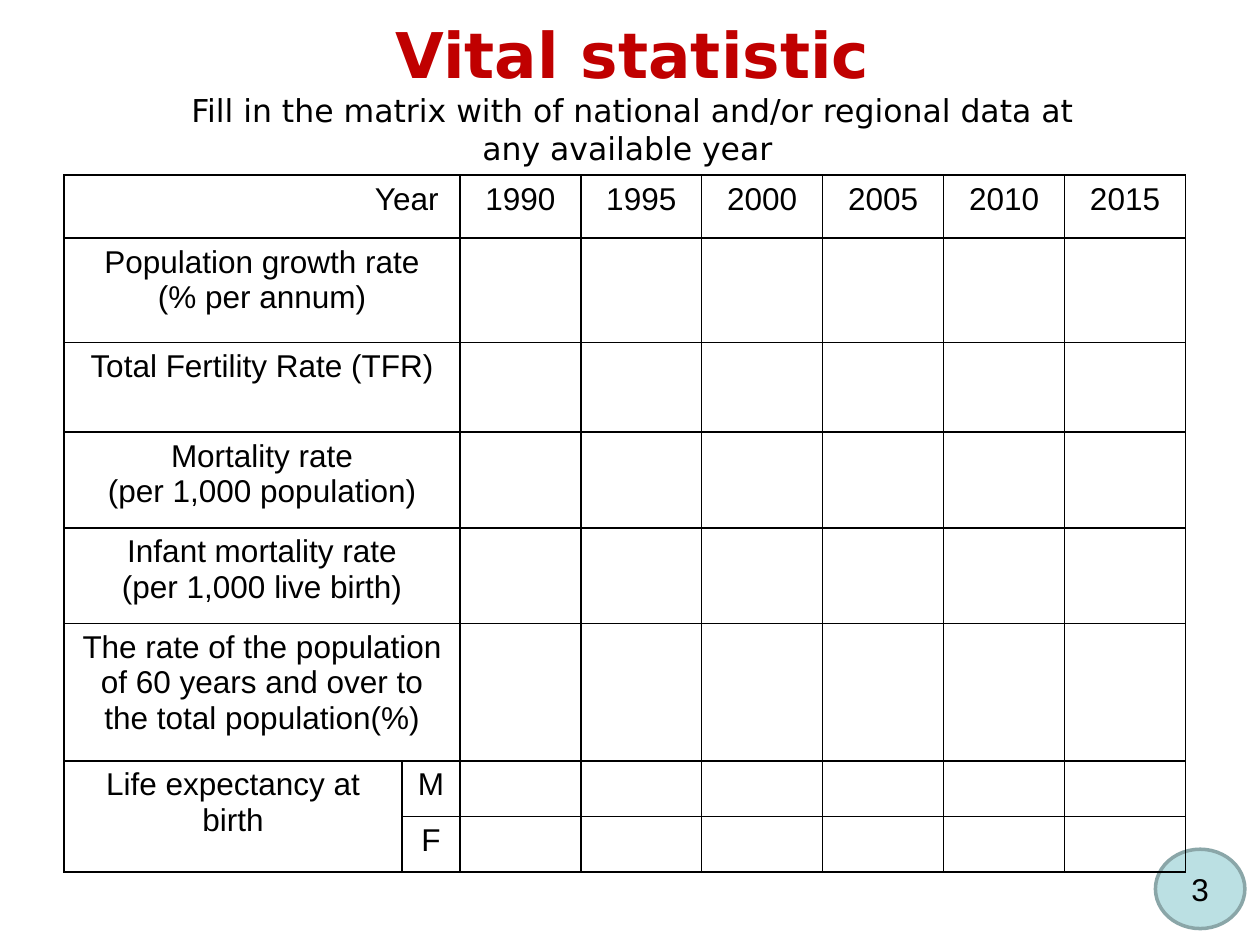
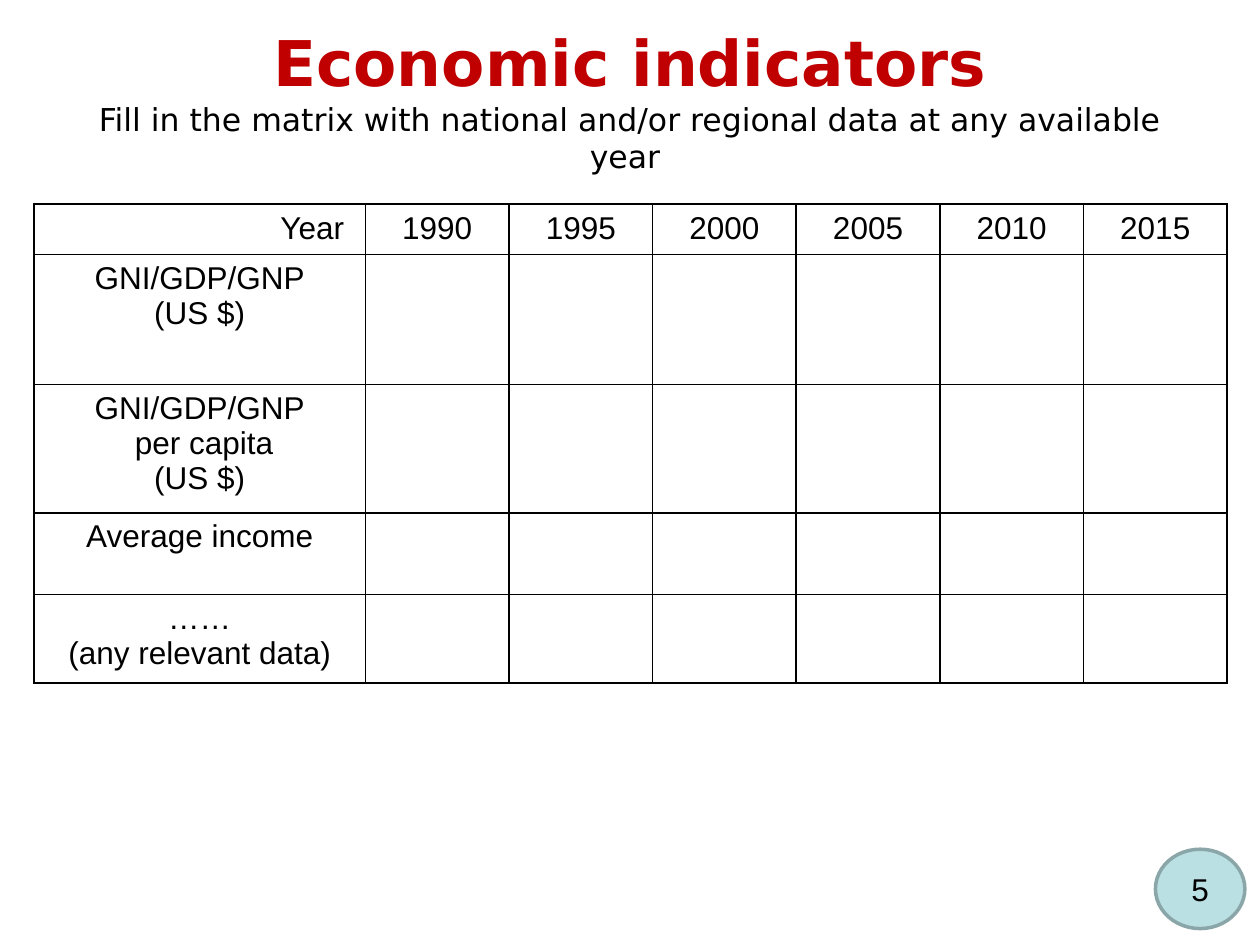
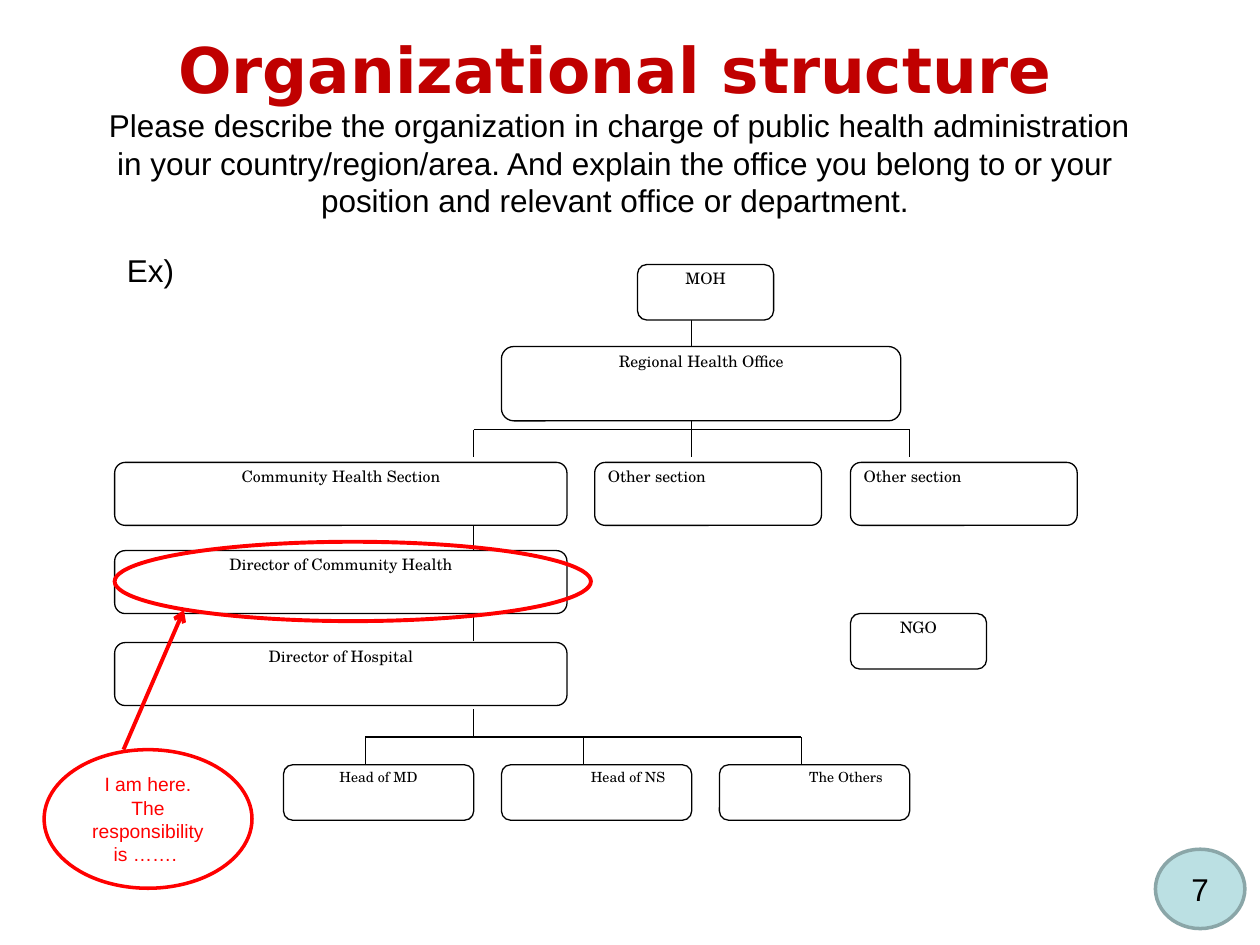
from typing import NamedTuple, Optional

from lxml import etree
from pptx import Presentation
from pptx.dml.color import RGBColor
from pptx.enum.shapes import MSO_CONNECTOR as Connector, MSO_SHAPE as Preset
from pptx.enum.text import MSO_ANCHOR as Anchor, PP_ALIGN as Align
from pptx.oxml.ns import qn
from pptx.util import Inches, Pt

COLORS = {
    "title": "C00000",
    "text": "000000",
    "line": "000000",
    "box": "FFFFFF",
    "badge": "BBE0E3",
    "badge_line": "8AA6A8",
    "callout": "FF0000",
}
SANS, TITLE_FONT, CHART_FONT = "Arial", "DejaVu Sans", "TeX Gyre Schola"
YEARS = ["1990", "1995", "2000", "2005", "2010", "2015"]


class Area(NamedTuple):
    left: float
    top: float
    width: float
    height: float

    def lengths(self) -> list:
        return [Inches(value) for value in self]


class Heading(NamedTuple):
    area: Area
    title: str
    subtitle: str
    subtitle_font: str = TITLE_FONT


class Matrix(NamedTuple):
    area: Area
    label_widths: list
    year_width: float
    row_heights: list
    labels: list


class OrgBox(NamedTuple):
    text: str
    area: Area
    align: Align = Align.CENTER
    size: float = 9
    indent: float = 0


def rgb(name: str) -> RGBColor:
    return RGBColor.from_string(COLORS[name])


# Text and shape helpers
def add_run(paragraph, text: str, size: float, font: str = SANS,
            color: str = "text", bold: bool = False) -> None:
    run = paragraph.add_run()
    run.text = text
    run.font.size = Pt(size)
    run.font.name = font
    run.font.bold = bold
    run.font.color.rgb = rgb(color)


def write_lines(frame, text: str, size: float, font: str = SANS,
                color: str = "text", align: Align = Align.CENTER) -> None:
    frame.word_wrap = True
    for index, line in enumerate(text.split("\n")):
        paragraph = frame.add_paragraph() if index else frame.paragraphs[0]
        paragraph.alignment = align
        add_run(paragraph, line, size, font, color)


def add_outlined(slide, preset: Preset, area: Area, line: str, width: float,
                 fill: Optional[str] = None):
    shape = slide.shapes.add_shape(preset, *area.lengths())
    shape.shadow.inherit = False
    if fill:
        shape.fill.solid()
        shape.fill.fore_color.rgb = rgb(fill)
    else:
        shape.fill.background()
    shape.line.color.rgb = rgb(line)
    shape.line.width = Pt(width)
    return shape


def add_line(slide, start: tuple, end: tuple, color: str = "line",
             width: float = 0.75, arrow: bool = False) -> None:
    points = [Inches(value) for value in (*start, *end)]
    connector = slide.shapes.add_connector(Connector.STRAIGHT, *points)
    connector.line.color.rgb = rgb(color)
    connector.line.width = Pt(width)
    properties = connector._element.spPr
    if arrow:
        line = properties.find(qn("a:ln"))
        etree.SubElement(line, qn("a:tailEnd"), type="arrow")
    etree.SubElement(properties, qn("a:effectLst"))


# Shared heading and page badge
def add_page(presentation, heading: Heading, number: str):
    slide = presentation.slides.add_slide(presentation.slide_layouts[6])
    frame = slide.shapes.add_textbox(*heading.area.lengths()).text_frame
    frame.word_wrap = True
    frame.vertical_anchor = Anchor.MIDDLE
    paragraph = frame.paragraphs[0]
    paragraph.alignment = Align.CENTER
    add_run(paragraph, heading.title, 36, TITLE_FONT, "title", bold=True)
    paragraph.add_line_break()
    add_run(paragraph, heading.subtitle, 18, heading.subtitle_font)

    badge = add_outlined(slide, Preset.OVAL, Area(9.17, 6.74, 0.71, 0.63),
                         "badge_line", 2, "badge")
    badge.text_frame.vertical_anchor = Anchor.MIDDLE
    write_lines(badge.text_frame, number, 18)
    return slide


# Matrix of indicators by year
def style_cell(cell) -> None:
    properties = cell._tc.get_or_add_tcPr()
    for side in ("a:lnL", "a:lnR", "a:lnT", "a:lnB"):
        border = etree.SubElement(properties, qn(side), w=str(Pt(1)))
        solid = etree.SubElement(border, qn("a:solidFill"))
        etree.SubElement(solid, qn("a:srgbClr"), val=COLORS["line"])
    cell.fill.background()


def add_matrix(slide, matrix: Matrix):
    label_count = len(matrix.label_widths)
    widths = matrix.label_widths + [matrix.year_width] * len(YEARS)
    table = slide.shapes.add_table(len(matrix.row_heights), len(widths),
                                   *matrix.area.lengths()).table
    table.first_row = table.horz_banding = False
    for column, width in zip(table.columns, widths):
        column.width = Inches(width)
    for row, height in zip(table.rows, matrix.row_heights):
        row.height = Inches(height)
    for cell in table.iter_cells():
        style_cell(cell)

    write_lines(table.cell(0, 0).text_frame, "Year ", 18, align=Align.RIGHT)
    for index, year in enumerate(YEARS, label_count):
        write_lines(table.cell(0, index).text_frame, year, 18)
    for index, label in enumerate(matrix.labels, 1):
        write_lines(table.cell(index, 0).text_frame, label, 18)
    return table


def build_vital_statistic(presentation) -> None:
    slide = add_page(presentation, Heading(
        Area(1.38, 0.21, 7.28, 1.02), "Vital statistic",
        "Fill in the matrix with of national and/or regional data at any available year "), "3")
    table = add_matrix(slide, Matrix(
        Area(0.51, 1.39, 8.9, 5.51), [2.68, 0.46], 0.96,
        [0.5, 0.83, 0.71, 0.76, 0.76, 1.09, 0.44, 0.44],
        ["Population growth rate\n(% per annum)",
         "Total Fertility Rate (TFR)",
         "Mortality rate\n(per 1,000 population)",
         "Infant mortality rate\n(per 1,000 live birth)",
         "The rate of the population of 60 years and over to the total population(%)",
         "Life expectancy at birth"]))
    for row in range(6):
        table.cell(row, 0).merge(table.cell(row, 1))
    table.cell(6, 0).merge(table.cell(7, 0))
    for row, sex in enumerate("MF", 6):
        write_lines(table.cell(row, 1).text_frame, sex, 18)


def build_economic_indicators(presentation) -> None:
    slide = add_page(presentation, Heading(
        Area(0.59, 0.28, 8.82, 1.02), "Economic indicators",
        "Fill in the matrix with national and/or regional data at any available year "), "5")
    add_matrix(slide, Matrix(
        Area(0.27, 1.62, 9.49, 3.8), [2.63], 1.14,
        [0.4, 1.03, 1.02, 0.65, 0.65],
        ["GNI/GDP/GNP\n(US $)",
         "GNI/GDP/GNP\n per capita\n(US $)",
         "Average income",
         "……\n(any relevant data)"]))


# Organization chart
BRANCH_STEP, BRANCH_DROP = 1.73, 0.22
SECTION_X, HEAD_X = 3.76, 2.9
OFFICE_X = SECTION_X + BRANCH_STEP
HEAD_BOX_LEFT, HEAD_BOX_TOP = 2.25, 6.07

ORG_BOXES = [
    OrgBox("MOH", Area(5.06, 2.1, 1.08, 0.44)),
    OrgBox("Regional Health Office", Area(3.98, 2.75, 3.17, 0.59)),
    OrgBox("NGO", Area(6.75, 4.87, 1.08, 0.44)),
]
ORG_BOXES += [
    OrgBox(text, Area(0.91, top, 3.59, 0.5))
    for text, top in [("Community Health Section", 3.67),
                      ("Director of Community Health", 4.37),
                      ("Director of Hospital", 5.1)]
]
ORG_BOXES += [OrgBox("Other section", Area(left, 3.67, 1.8, 0.5), Align.JUSTIFY)
              for left in (4.72, 6.75)]
ORG_BOXES += [
    OrgBox(text, Area(HEAD_BOX_LEFT + index * BRANCH_STEP, HEAD_BOX_TOP, 1.51, 0.44),
           size=8, indent=indent)
    for index, (text, indent) in enumerate(
        [("Head of MD", 0), ("Head of NS", 0.5), ("The Others", 0.5)])
]


def add_branches(slide, first_x: float, stem_x: float, y: float) -> None:
    """Draw a stem, a crossbar and three equally spaced drops."""
    add_line(slide, (stem_x, y - BRANCH_DROP), (stem_x, y))
    add_line(slide, (first_x, y), (first_x + 2 * BRANCH_STEP, y))
    for index in range(3):
        x = first_x + index * BRANCH_STEP
        add_line(slide, (x, y), (x, y + BRANCH_DROP))


def add_org_box(slide, box: OrgBox) -> None:
    shape = add_outlined(slide, Preset.ROUNDED_RECTANGLE, box.area, "line", 0.75, "box")
    shape.adjustments[0] = 0.167
    frame = shape.text_frame
    frame.margin_left = frame.margin_right = Inches(0.08)
    frame.margin_top = frame.margin_bottom = Inches(0.01)
    frame.vertical_anchor = Anchor.TOP
    write_lines(frame, box.text, box.size, CHART_FONT, align=box.align)
    if box.indent:
        paragraph = frame.paragraphs[0]
        paragraph.level = 1
        properties = paragraph._p.get_or_add_pPr()
        properties.set("marL", str(Inches(box.indent)))
        properties.set("indent", "0")


def build_organizational_structure(presentation) -> None:
    slide = add_page(presentation, Heading(
        Area(0.59, 0.28, 8.58, 1.42), "Organizational structure",
        " Please describe the organization in charge of public health administration "
        "in your country/region/area. And explain the office you belong to or your "
        "position and relevant office or department.", SANS), "7")

    # Lines lie under the boxes
    for x, top, bottom in [(OFFICE_X, 2.54, 2.76), (SECTION_X, 4.07, 4.4),
                           (SECTION_X, 4.87, 5.09)]:
        add_line(slide, (x, top), (x, bottom))
    add_branches(slide, SECTION_X, OFFICE_X, 3.41)
    add_branches(slide, HEAD_X, SECTION_X, 5.85)
    for box in ORG_BOXES:
        add_org_box(slide, box)

    example = slide.shapes.add_textbox(*Area(0.91, 1.94, 2.2, 0.4).lengths())
    write_lines(example.text_frame, "Ex)", 18, align=Align.LEFT)

    # Marker and callout for the speaker's own office
    add_outlined(slide, Preset.OVAL, Area(0.91, 4.3, 3.78, 0.63), "callout", 2.25)
    add_line(slide, (0.98, 5.95), (1.46, 4.84), "callout", 2.25, arrow=True)
    callout = add_outlined(slide, Preset.OVAL, Area(0.35, 5.95, 1.65, 1.1), "callout", 2)
    callout.text_frame.vertical_anchor = Anchor.MIDDLE
    write_lines(callout.text_frame, "I am here.\nThe responsibility is ……. ", 11,
                color="callout")


def main() -> None:
    presentation = Presentation()
    presentation.slide_width, presentation.slide_height = Inches(10), Inches(7.5)
    build_vital_statistic(presentation)
    build_economic_indicators(presentation)
    build_organizational_structure(presentation)
    presentation.save("out.pptx")


if __name__ == "__main__":
    main()
